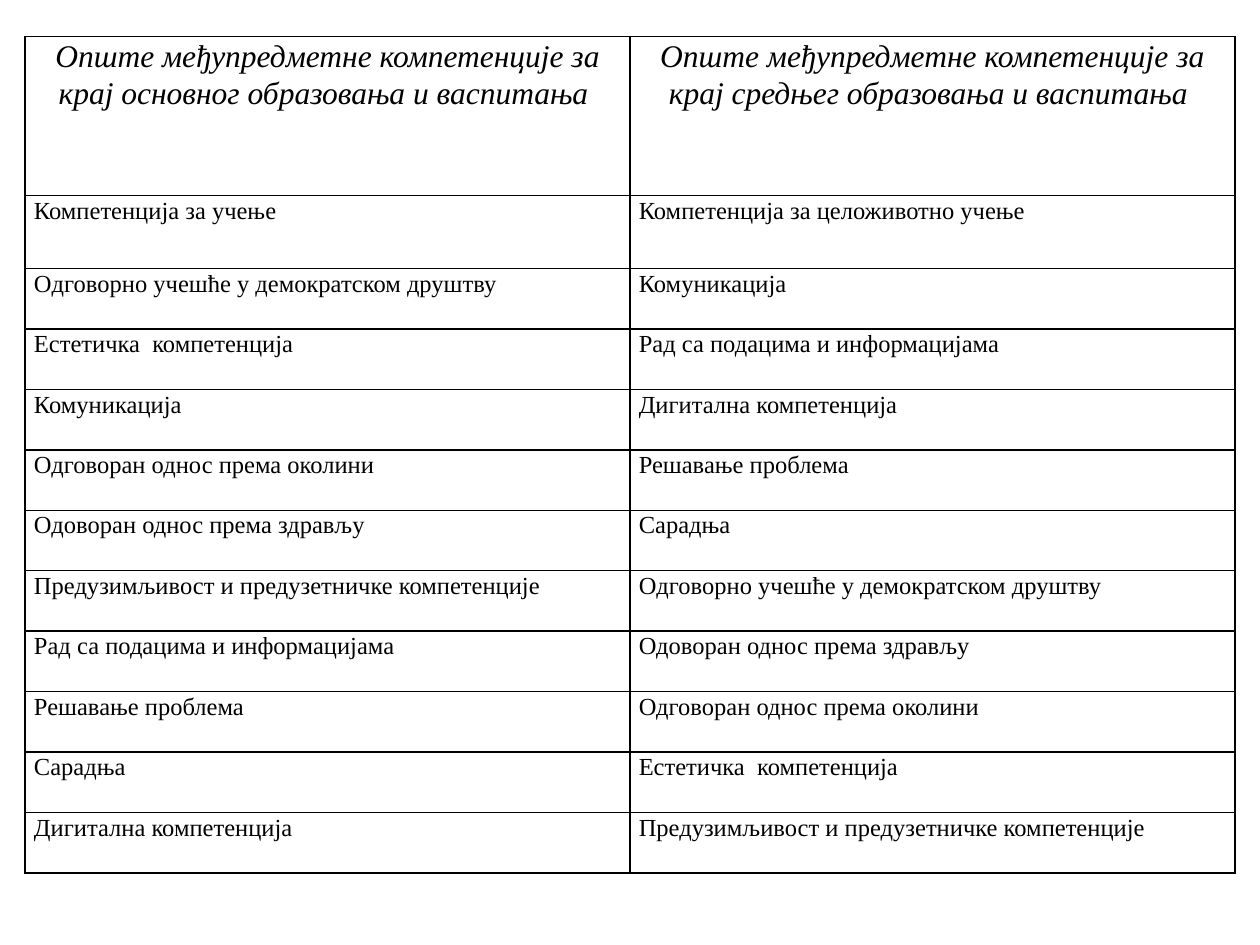
import pptx
import pptx.dml.color
import pptx.enum.text
import pptx.oxml
import pptx.oxml.ns
import pptx.util

PX = 9144
COLORS = {"ink": "000000"}
FONT = "Times New Roman"
ALIGN = pptx.enum.text.PP_ALIGN
COLUMN_WIDTH = 480
ROW_HEIGHTS = [126, 58] + [48] * 10
HEADINGS = (
    "Опште међупредметне компетенције за крај основног образовања и васпитања ",
    "Опште међупредметне компетенције за крај средњег образовања и васпитања ",
)
COMPETENCES = [
    ("Компетенција за учење", "Компетенција за целоживотно учење"),
    ("Oдговорно учешће у демократском друштву", "Комуникација"),
    ("Естетичка  компетенција", "Рад са подацима и информацијама"),
    ("Комуникација", "Дигитална компетенција"),
    ("Одговоран однос према околини", "Решавање проблема"),
    ("Одоворан однос према здрављу", "Сарадња"),
    ("Предузимљивост и предузетничке компетенције", "Oдговорно учешће у демократском друштву"),
    ("Рад са подацима и информацијама", "Одоворан однос према здрављу"),
    ("Решавање проблема", "Одговоран однос према околини"),
    ("Сарадња", "Естетичка  компетенција"),
    ("Дигитална компетенција", "Предузимљивост и предузетничке компетенције"),
]


def px(length):
    return pptx.util.Emu(length * PX)


def set_borders(cell):
    properties = cell._tc.get_or_add_tcPr()
    for index, side in enumerate(("lnL", "lnR", "lnT", "lnB")):
        border = pptx.oxml.parse_xml(
            f'<a:{side} {pptx.oxml.ns.nsdecls("a")} w="{pptx.util.Pt(1)}">'
            f'<a:solidFill><a:srgbClr val="{COLORS["ink"]}"/></a:solidFill>'
            f'</a:{side}>'
        )
        properties.insert(index, border)


def fill_cell(cell, text, size, align, italic):
    cell.margin_left = cell.margin_right = px(7)
    cell.margin_top = cell.margin_bottom = 0
    cell.fill.background()
    set_borders(cell)
    para = cell.text_frame.paragraphs[0]
    para.alignment = align
    para.line_spacing = 1.07
    span = para.add_run()
    span.text = text
    span.font.name = FONT
    span.font.size = pptx.util.Pt(size)
    span.font.italic = italic
    span.font.color.rgb = pptx.dml.color.RGBColor.from_string(COLORS["ink"])


def add_competence_table(page):
    rows = [HEADINGS] + COMPETENCES
    frame = page.shapes.add_table(
        len(rows), 2, px(20), px(29), px(2 * COLUMN_WIDTH), px(sum(ROW_HEIGHTS))
    )
    table = frame.table
    table.first_row = False
    table.horz_banding = False
    for column in table.columns:
        column.width = px(COLUMN_WIDTH)
    for row, height, texts in zip(table.rows, ROW_HEIGHTS, rows):
        row.height = px(height)
        heading = texts is HEADINGS
        size = 18 if heading else 14
        align = ALIGN.CENTER if heading else ALIGN.JUSTIFY
        for cell, text in zip(row.cells, texts):
            fill_cell(cell, text, size, align, heading)


def main():
    deck = pptx.Presentation()
    deck.slide_width = px(1000)
    deck.slide_height = px(750)
    page = deck.slides.add_slide(deck.slide_layouts[6])
    add_competence_table(page)
    deck.save("out.pptx")


if __name__ == "__main__":
    main()
